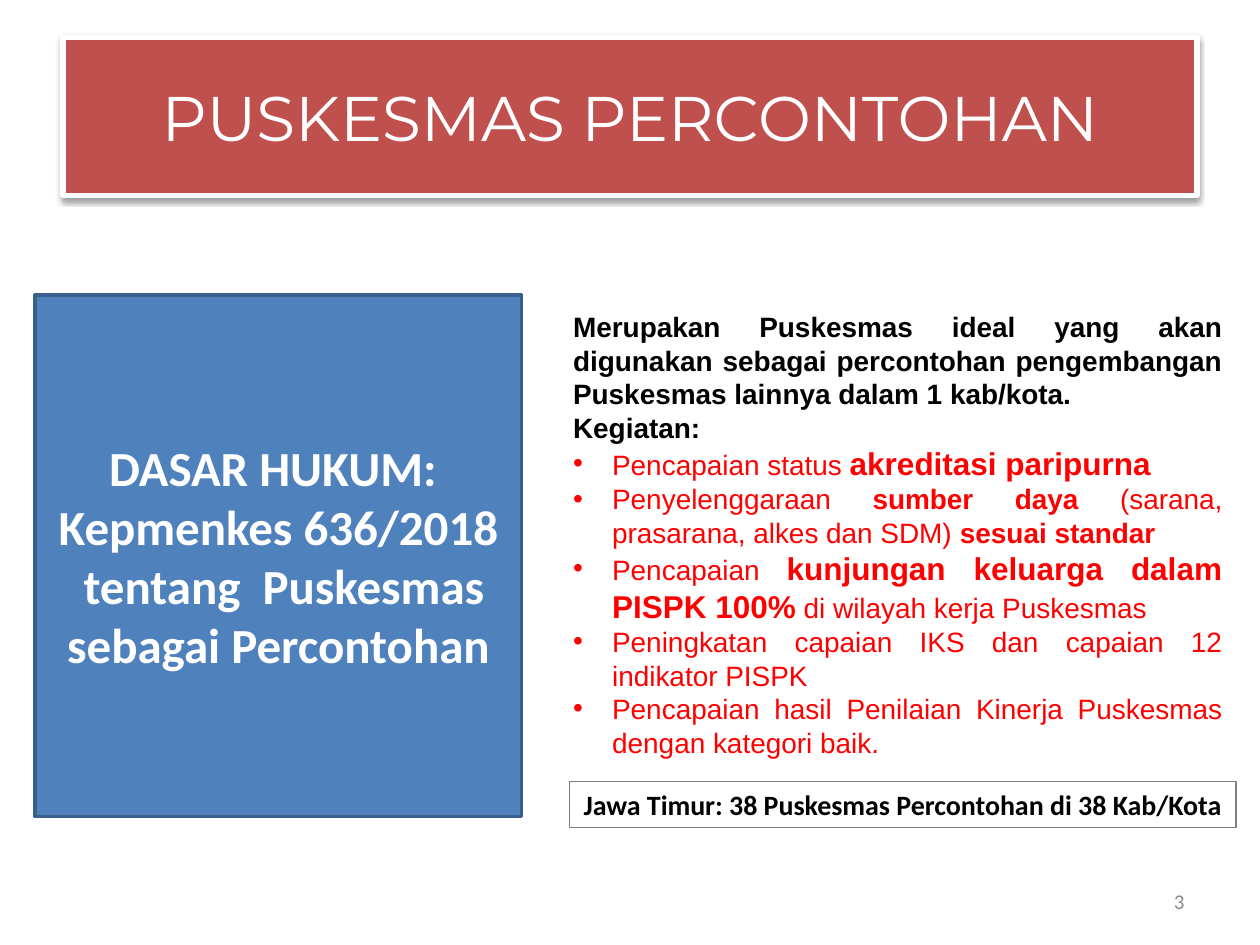
from dataclasses import dataclass
from typing import Optional

import lxml.etree
import pptx
import pptx.dml.color
import pptx.enum.shapes
import pptx.enum.text
import pptx.oxml
import pptx.oxml.ns
import pptx.util

WIDTH, HEIGHT = 10, 7.5
COLORS = {
    "white": "FFFFFF", "black": "000000", "red": "FF0000", "brick": "C0504D",
    "blue": "4F81BD", "navy": "3A5F8C", "gray": "808080", "number": "8C8C8C",
}
ALIGN = pptx.enum.text.PP_ALIGN
ANCHOR = pptx.enum.text.MSO_ANCHOR


@dataclass
class Area:
    """A place on the slide, in shares of its width and height."""
    left: float
    top: float
    width: float
    height: float

    def lengths(self) -> list[int]:
        return [pptx.util.Inches(share * side) for share, side in
                zip((self.left, self.top, self.width, self.height),
                    (WIDTH, HEIGHT, WIDTH, HEIGHT))]


@dataclass
class Span:
    text: str
    bold: bool = False
    size: Optional[float] = None


@dataclass
class Line:
    spans: list[Span]
    color: str = "black"
    bullet: bool = False


def rgb(name: str) -> pptx.dml.color.RGBColor:
    return pptx.dml.color.RGBColor.from_string(COLORS[name])


def add_box(slide, area: Area, line: str, line_width: float,
            fill: Optional[str] = None):
    box = slide.shapes.add_shape(
        pptx.enum.shapes.MSO_SHAPE.RECTANGLE, *area.lengths())
    box.shadow.inherit = False
    if fill:
        box.fill.solid()
        box.fill.fore_color.rgb = rgb(fill)
    else:
        box.fill.background()
    box.line.color.rgb = rgb(line)
    box.line.width = pptx.util.Pt(line_width)
    return box


def add_shadow(shape, blur: float, distance: float, alpha: int) -> None:
    effects = shape._element.spPr.find(pptx.oxml.ns.qn("a:effectLst"))
    effects.append(pptx.oxml.parse_xml(
        f'<a:outerShdw {pptx.oxml.ns.nsdecls("a")} blurRad="{pptx.util.Pt(blur)}" '
        f'dist="{pptx.util.Pt(distance)}" dir="5400000" rotWithShape="0">'
        f'<a:srgbClr val="{COLORS["black"]}"><a:alpha val="{alpha * 1000}"/>'
        '</a:srgbClr></a:outerShdw>'))


def add_bullet(paragraph, indent: float) -> None:
    properties = paragraph._p.get_or_add_pPr()
    properties.set("marL", str(pptx.util.Inches(indent)))
    properties.set("indent", str(-pptx.util.Inches(indent)))
    for tag, attribute, value in (("a:buFont", "typeface", "Arial"),
                                  ("a:buChar", "char", "•")):
        mark = lxml.etree.SubElement(properties, pptx.oxml.ns.qn(tag))
        mark.set(attribute, value)


def write(shape, lines: list[Line], *, font: str, size: float,
          align=ALIGN.CENTER, anchor=ANCHOR.MIDDLE) -> None:
    frame = shape.text_frame
    frame.word_wrap = True
    frame.vertical_anchor = anchor
    for index, line in enumerate(lines):
        paragraph = frame.add_paragraph() if index else frame.paragraphs[0]
        paragraph.alignment = align
        if line.bullet:
            add_bullet(paragraph, 0.31)
        for span in line.spans:
            run = paragraph.add_run()
            run.text = span.text
            run.font.name = font
            run.font.size = pptx.util.Pt(span.size or size)
            run.font.bold = span.bold
            run.font.color.rgb = rgb(line.color)


def activity(*spans: Span) -> Line:
    return Line(list(spans), color="red", bullet=True)


LEGAL_BASIS = [
    Line([Span(text, bold=True)], color="white")
    for text in ("DASAR HUKUM: ", "Kepmenkes 636/2018",
                 " tentang  Puskesmas sebagai Percontohan")
]
DESCRIPTION = [
    Line([Span("Merupakan Puskesmas ideal yang akan digunakan sebagai percontohan "
               "pengembangan Puskesmas lainnya dalam 1 kab/kota.", bold=True)]),
    Line([Span("Kegiatan:", bold=True)]),
    activity(Span("Pencapaian status "),
             Span("akreditasi paripurna", bold=True, size=18)),
    activity(Span("Penyelenggaraan "), Span("sumber daya ", bold=True),
             Span("(sarana, prasarana, alkes dan SDM) "),
             Span("sesuai standar", bold=True)),
    activity(Span("Pencapaian "),
             Span("kunjungan keluarga dalam PISPK 100%", bold=True, size=18),
             Span(" di wilayah kerja Puskesmas")),
    activity(Span("Peningkatan capaian IKS dan capaian 12 indikator PISPK")),
    activity(Span("Pencapaian hasil Penilaian Kinerja Puskesmas dengan kategori baik.")),
]


def main() -> None:
    deck = pptx.Presentation()
    deck.slide_width = pptx.util.Inches(WIDTH)
    deck.slide_height = pptx.util.Inches(HEIGHT)
    slide = deck.slides.add_slide(deck.slide_layouts[6])

    # Title banner
    banner = add_box(slide, Area(0.05, 0.04, 0.9, 1 / 6), "white", 3, fill="brick")
    add_shadow(banner, blur=3.1, distance=1.6, alpha=38)
    write(banner, [Line([Span("PUSKESMAS PERCONTOHAN")], color="white"),],
          font="Montserrat", size=36)

    # Slide number
    number = slide.shapes.add_textbox(*Area(0.717, 0.927, 0.233, 0.053).lengths())
    write(number, [Line([Span("3")], color="number")],
          font="Calibri", size=12, align=ALIGN.RIGHT)

    # Legal basis
    legal_basis = add_box(slide, Area(0.028, 0.312, 0.386, 0.552), "navy", 2,
                          fill="blue")
    write(legal_basis, LEGAL_BASIS, font="Calibri", size=28)

    # Description and activities
    description = slide.shapes.add_textbox(
        *Area(0.445, 0.321, 0.535, 0.529).lengths())
    write(description, DESCRIPTION, font="Arial", size=16,
          align=ALIGN.JUSTIFY, anchor=ANCHOR.TOP)

    # Provincial total
    total = add_box(slide, Area(0.452, 0.827, 0.529, 0.049), "gray", 0.75)
    write(total, [Line([Span("Jawa Timur: 38 Puskesmas Percontohan di 38 Kab/Kota",
                             bold=True)])],
          font="Calibri", size=16, anchor=ANCHOR.TOP)

    deck.save("out.pptx")


if __name__ == "__main__":
    main()
